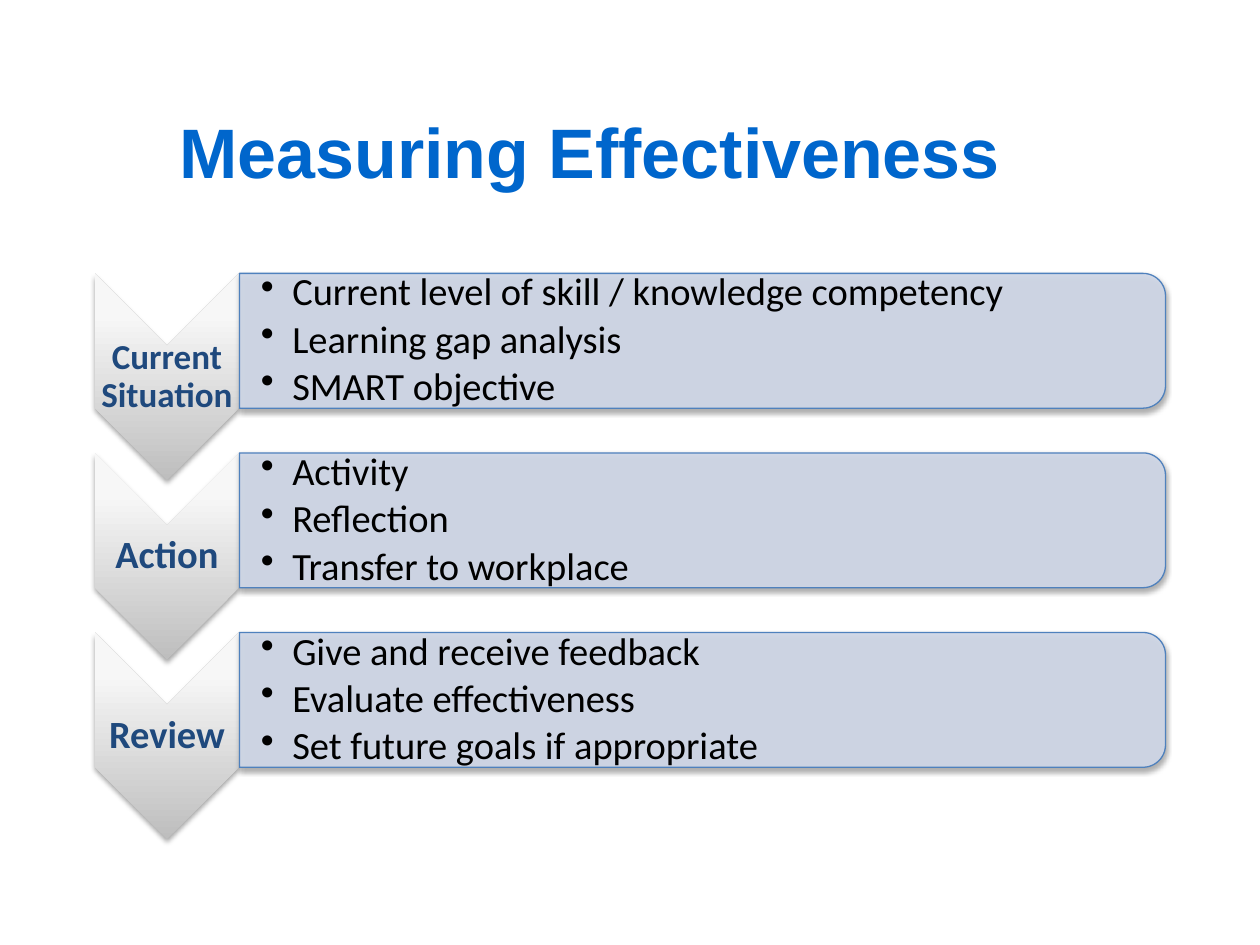
from lxml.etree import SubElement
from pptx import Presentation
from pptx.dml.color import RGBColor
from pptx.enum.shapes import MSO_SHAPE as Preset
from pptx.enum.text import MSO_ANCHOR as Anchor, PP_ALIGN as Align
from pptx.oxml.ns import qn
from pptx.util import Inches, Pt

STAGES = [
    ("Current Situation", 20, ["Current level of skill / knowledge competency",
                               "Learning gap analysis", "SMART objective"]),
    ("Action", 22, ["Activity", "Reflection", "Transfer to workplace"]),
    ("Review", 22, ["Give and receive feedback", "Evaluate effectiveness",
                    "Set future goals if appropriate"]),
]
LABEL = dict(name="Calibri", bold=True)
BULLET = dict(name="Calibri", size=Pt(22))
STAGE_PITCH = 1.425


def color(hex_text):
    return RGBColor.from_string(hex_text)


def style(span, hex_text, formats):
    for key, value in formats.items():
        setattr(span.font, key, value)
    span.font.color.rgb = color(hex_text)


def add_xml(parent, tag, **attributes):
    return SubElement(parent, qn(tag), {k: str(v) for k, v in attributes.items()})


def add_turned_shape(page, preset, left, top, width, height):
    """Add a shape turned by 90 degrees that covers the given box."""
    shift = (width - height) / 2
    shape = page.shapes.add_shape(preset, Inches(left + shift), Inches(top - shift),
                                  Inches(height), Inches(width))
    shape.rotation = 90
    # Soft shadow below the shape
    shape.shadow.inherit = False
    effects = shape._element.spPr.find(qn("a:effectLst"))
    shadow = add_xml(effects, "a:outerShdw", blurRad=Pt(3.1), dist=Pt(1.8),
                     dir=5400000, rotWithShape=0)
    add_xml(add_xml(shadow, "a:srgbClr", val="000000"), "a:alpha", val=35000)
    return shape


def fill_gradient(shape, stops):
    """Run the stops from bottom to top, whatever the rotation."""
    shape.fill.gradient()
    gradient = shape._element.spPr.find(qn("a:gradFill"))
    gradient.set("rotWithShape", "0")
    for child in list(gradient):
        gradient.remove(child)
    stop_list = add_xml(gradient, "a:gsLst")
    for percent, hex_text in stops:
        stop = add_xml(stop_list, "a:gs", pos=percent * 1000)
        add_xml(stop, "a:srgbClr", val=hex_text)
    add_xml(gradient, "a:lin", ang=16200000, scaled=0)


def add_text_frame(page, left, top, width, height, margin, margin_left):
    box = page.shapes.add_textbox(Inches(left), Inches(top), Inches(width), Inches(height))
    frame = box.text_frame
    formats = dict(word_wrap=True, vertical_anchor=Anchor.MIDDLE,
                   margin_left=Inches(margin_left), margin_top=Inches(margin),
                   margin_right=Inches(margin), margin_bottom=Inches(margin))
    for key, value in formats.items():
        setattr(frame, key, value)
    return frame


def add_title(page, left, top, width, height):
    title = page.shapes.title
    title.left, title.top = Inches(left), Inches(top)
    title.width, title.height = Inches(width), Inches(height)
    frame = title.text_frame
    frame.vertical_anchor = Anchor.TOP
    frame.margin_top = Inches(0.1)
    para = frame.paragraphs[0]
    para.alignment = Align.CENTER
    span = para.add_run()
    span.text = "Measuring Effectiveness"
    style(span, "0066CC", dict(name="Arial", size=Pt(40), bold=True))


def add_chevron(page, left, top, width, height, label, size):
    chevron = add_turned_shape(page, Preset.CHEVRON, left, top, width, height)
    fill_gradient(chevron, [(0, "BEBEBE"), (80, "F7F7F7"), (100, "F8F8F8")])
    chevron.line.fill.background()
    # Label between the notch and the point
    notch = width / 2
    frame = add_text_frame(page, left, top + notch, width, height - 2 * notch, 0.01, 0.01)
    para = frame.paragraphs[0]
    para.alignment, para.line_spacing = Align.CENTER, 0.9
    span = para.add_run()
    span.text = label
    style(span, "1F497D", dict(LABEL, size=Pt(size)))


def add_bullet_bar(page, left, top, width, height, items):
    bar = add_turned_shape(page, Preset.ROUND_2_SAME_RECTANGLE, left, top, width, height)
    bar.fill.solid()
    bar.fill.fore_color.rgb = color("D0D8E8")
    fill = bar._element.spPr.find(qn("a:solidFill"))
    add_xml(fill[0], "a:alpha", val=90000)
    bar.line.color.rgb = color("4F81BD")
    bar.line.width = Pt(0.75)
    # Bulleted text
    frame = add_text_frame(page, left, top + 0.05, width - 0.05, height - 0.1, 0.02, 0.17)
    for index, item in enumerate(items):
        para = frame.add_paragraph() if index else frame.paragraphs[0]
        para.level = 1
        properties = para._p.get_or_add_pPr()
        properties.set("marL", str(Inches(0.25)))
        properties.set("indent", str(Inches(-0.25)))
        add_xml(properties, "a:buChar", char="•")
        para.line_spacing, para.space_after = 0.9, Pt(3.3)
        span = para.add_run()
        span.text = item
        style(span, "000000", BULLET)


def add_stage(page, left, top, label, size, items):
    add_chevron(page, left, top, 1.15, 1.64, label, size)
    add_bullet_bar(page, left + 1.15, top, 7.35, 1.07, items)


def main():
    deck = Presentation()
    deck.slide_width, deck.slide_height = Inches(10), Inches(7.5)
    page = deck.slides.add_slide(deck.slide_layouts[5])
    add_title(page, 0.43, 0.76, 8.5, 1.25)
    for index, stage in enumerate(STAGES):
        add_stage(page, 0.75, 2.17 + index * STAGE_PITCH, *stage)
    deck.save("out.pptx")


if __name__ == "__main__":
    main()
